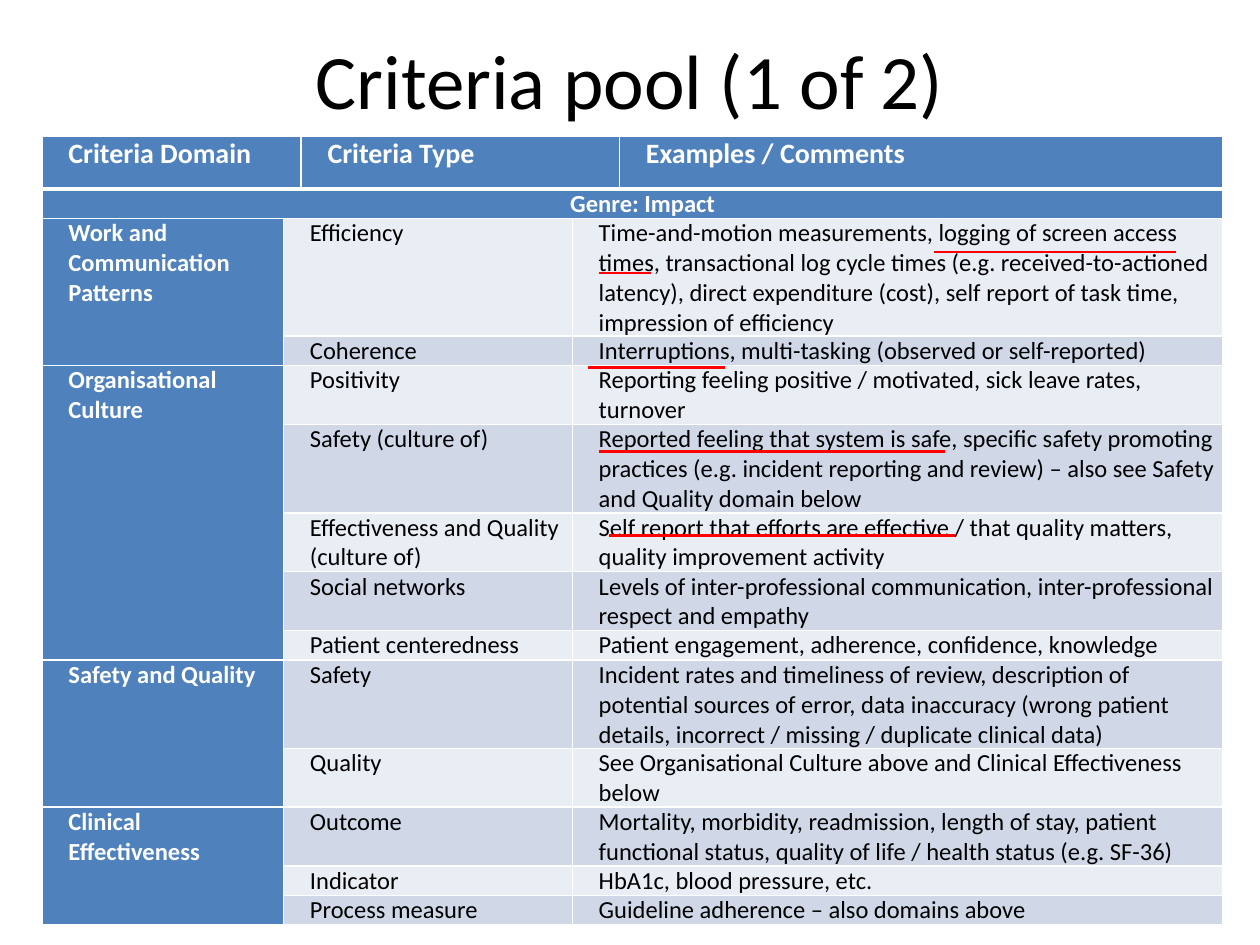
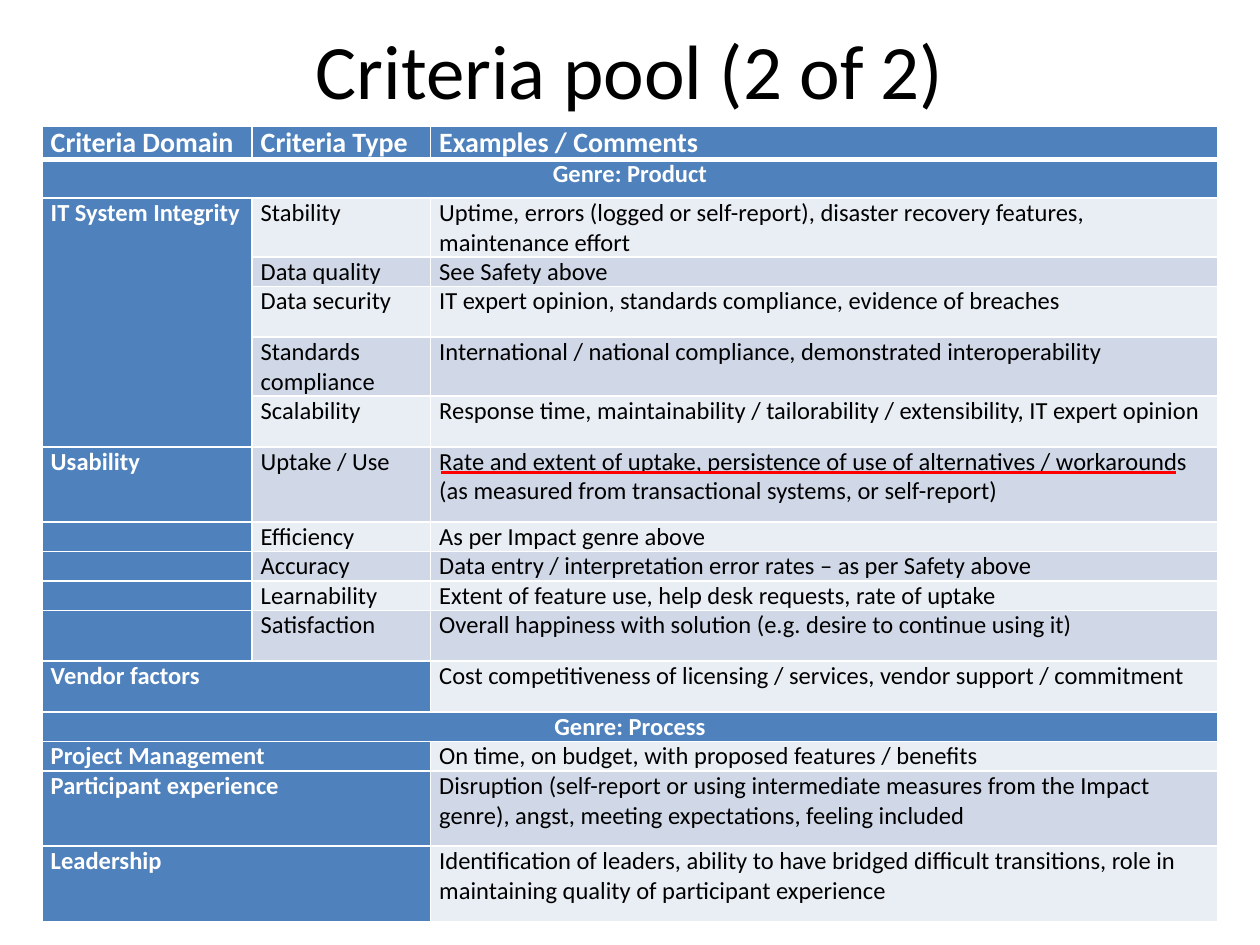
import pptx
import pptx.util
import pptx.dml.color
import pptx.enum.shapes
import pptx.enum.text
import pptx.oxml.ns
import lxml.etree

Pt = pptx.util.Pt
Color = pptx.dml.color.RGBColor
Align = pptx.enum.text.PP_ALIGN

BLACK = Color(0x00, 0x00, 0x00)
WHITE = Color(0xFF, 0xFF, 0xFF)
RED = Color(0xFF, 0x00, 0x00)
BLUE = Color(0x4F, 0x81, 0xBD)
PALE = Color(0xE9, 0xED, 0xF4)
GREY = Color(0xD0, 0xD8, 0xE8)
FONT = "Calibri"
LEFT = 24
HEAD = ("Criteria Domain", "Criteria Type", "Examples / Comments")

IMPACT = [
    (30, *HEAD),
    (15, "Genre: Impact"),
    (58, "Work and Communication Patterns", "Efficiency",
     "Time-and-motion measurements, logging of screen access times, transactional log cycle times "
     "(e.g. received-to-actioned latency), direct expenditure (cost), self report of task time, "
     "impression of efficiency"),
    (15, None, "Coherence", "Interruptions, multi-tasking (observed or self-reported)"),
    (20, "Organisational Culture", "Positivity",
     "Reporting feeling positive / motivated, sick leave rates, turnover"),
    (44, None, "Safety (culture of)",
     "Reported feeling that system is safe, specific safety promoting practices "
     "(e.g. incident reporting and review) – also see Safety and Quality domain below"),
    (30, None, "Effectiveness and Quality (culture of)",
     "Self report that efforts are effective / that quality matters, quality improvement activity"),
    (30, None, "Social networks",
     "Levels of inter-professional communication, inter-professional respect and empathy"),
    (15, None, "Patient centeredness", "Patient engagement, adherence, confidence, knowledge"),
    (44, "Safety and Quality", "Safety",
     "Incident rates and timeliness of review, description of potential sources of error, "
     "data inaccuracy (wrong patient details, incorrect / missing / duplicate clinical data)"),
    (30, None, "Quality", "See Organisational Culture above and Clinical Effectiveness below"),
    (30, "Clinical Effectiveness", "Outcome",
     "Mortality, morbidity, readmission, length of stay, patient functional status, "
     "quality of life / health status (e.g. SF-36)"),
    (15, None, "Indicator", "HbA1c, blood pressure, etc."),
    (15, None, "Process measure", "Guideline adherence – also domains above"),
]

PRODUCT = [
    (17, *HEAD),
    (22, "Genre: Product"),
    (29, "IT System Integrity", "Stability",
     "Uptime, errors (logged or self-report), disaster recovery features, maintenance effort"),
    (14, None, "Data quality", "See Safety above"),
    (29, None, "Data security", "IT expert opinion, standards compliance, evidence of breaches"),
    (29, None, "Standards compliance",
     "International / national compliance, demonstrated interoperability"),
    (29, None, "Scalability",
     "Response time, maintainability / tailorability / extensibility, IT expert opinion"),
    (43, "Usability", "Uptake / Use",
     "Rate and extent of uptake, persistence of use of alternatives / workarounds "
     "(as measured from transactional systems, or self-report)"),
    (14, "", "Efficiency", "As per Impact genre above"),
    (14, "", "Accuracy", "Data entry / interpretation error rates – as per Safety above"),
    (14, "", "Learnability", "Extent of feature use, help desk requests, rate of uptake"),
    (29, "", "Satisfaction", "Overall happiness with solution (e.g. desire to continue using it)"),
    (29, "Vendor factors",
     "Cost competitiveness of licensing / services, vendor support / commitment"),
    (14, "Genre: Process"),
    (14, "Project Management", "On time, on budget, with proposed features / benefits"),
    (43, "Participant experience",
     "Disruption (self-report or using intermediate measures from the Impact genre), "
     "angst, meeting expectations, feeling included"),
    (43, "Leadership",
     "Identification of leaders, ability to have bridged difficult transitions, "
     "role in maintaining quality of participant experience"),
]


def add_node(parent, tag, **attrs):
    node = lxml.etree.SubElement(parent, pptx.oxml.ns.qn(tag))
    for name, value in attrs.items():
        node.set(name, str(value))
    return node


def add_run(para, text, size, color, bold=False):
    run = para.add_run()
    run.text = text
    run.font.name = FONT
    run.font.size = Pt(size)
    run.font.bold = bold
    run.font.color.rgb = color


def add_title(slide, text, top):
    box = slide.shapes.add_textbox(Pt(36), Pt(top), Pt(648), Pt(90))
    frame = box.text_frame
    frame.word_wrap = True
    frame.vertical_anchor = pptx.enum.text.MSO_ANCHOR.MIDDLE
    para = frame.paragraphs[0]
    para.alignment = Align.CENTER
    add_run(para, text, 44, BLACK)


def add_mark(slide, start, end, top):
    mark = slide.shapes.add_connector(
        pptx.enum.shapes.MSO_CONNECTOR.STRAIGHT, Pt(start), Pt(top), Pt(end), Pt(top))
    mark.line.color.rgb = RED
    mark.line.width = Pt(1.5)
    add_node(mark._element.spPr, "a:effectLst")


def style_cell(cell, fill, inset, base):
    cell.margin_left = cell.margin_right = Pt(inset)
    cell.margin_top = cell.margin_bottom = 0
    props = cell._tc.get_or_add_tcPr()
    for side in "LRTB":
        width = base if side == "B" else 1
        line = add_node(props, "a:ln" + side, w=int(Pt(width)))
        solid = add_node(line, "a:solidFill")
        add_node(solid, "a:srgbClr", val=WHITE)
    cell.fill.solid()
    cell.fill.fore_color.rgb = fill


def fill_cell(cell, text, size, color, bold, align, indent):
    para = cell.text_frame.paragraphs[0]
    para.alignment = align
    para._p.get_or_add_pPr().set("marL", str(int(Pt(indent))))
    if text:
        add_run(para, text, size, color, bold)
    else:
        add_node(para._p, "a:endParaRPr", sz=size * 100)


def add_grid(slide, top, height, widths, rows, heads, starts, inset, indent):
    count = len(widths)
    shape = slide.shapes.add_table(
        len(rows), count, Pt(LEFT), Pt(top), Pt(sum(widths)), Pt(height))
    table = shape.table
    table.first_row = table.horz_banding = False
    for col, width in zip(table.columns, widths):
        col.width = Pt(width)
    spans = {1: (0,), 2: (0, starts[-1]), 3: starts}
    for r, (tall, *texts) in enumerate(rows):
        table.rows[r].height = Pt(tall)
        begins = spans[len(texts)] if r else heads
        for i, (begin, end, text) in enumerate(zip(begins, (*begins[1:], count), texts)):
            strong = r == 0 or i == 0
            fill = BLUE if strong else (GREY if r % 2 else PALE)
            for c in range(begin, end):
                style_cell(table.cell(r, c), fill, inset, 1 if r else 3)
                if c > begin or text is None:
                    fill_cell(table.cell(r, c), "", 14, BLACK, False, Align.LEFT, 0)
            if text is None:
                continue
            last = r
            while last + 1 < len(rows) and rows[last + 1][i + 1:i + 2] == (None,):
                last += 1
            cell = table.cell(r, begin)
            align = Align.CENTER if len(texts) == 1 else Align.LEFT
            fill_cell(cell, text, 14 if r else 16, WHITE if strong else BLACK,
                      strong, align, indent)
            if last > r or end - begin > 1:
                cell.merge(table.cell(last, end - 1))
    shape.height = Pt(height)


def main():
    deck = pptx.Presentation()
    deck.slide_width, deck.slide_height = Pt(720), Pt(540)
    blank = deck.slide_layouts[6]

    first = deck.slides.add_slide(blank)
    add_title(first, "Criteria pool (1 of 2)", 0)
    add_grid(first, 78, 450, (138, 7, 155, 27, 345), IMPACT, (0, 2, 4), (0, 1, 3), 3.6, 11.5)
    for start, end, top in ((534, 672, 144), (342, 372, 156), (336, 414, 210),
                            (342, 540, 258), (348, 546, 306)):
        add_mark(first, start, end, top)

    second = deck.slides.add_slide(blank)
    add_title(second, "Criteria pool (2 of 2)", -6)
    add_grid(second, 72, 455, (120, 102, 450), PRODUCT, (0, 1, 2), (0, 1, 2), 5, 0)
    add_mark(second, 252, 672, 270)

    deck.save("out.pptx")


if __name__ == "__main__":
    main()
